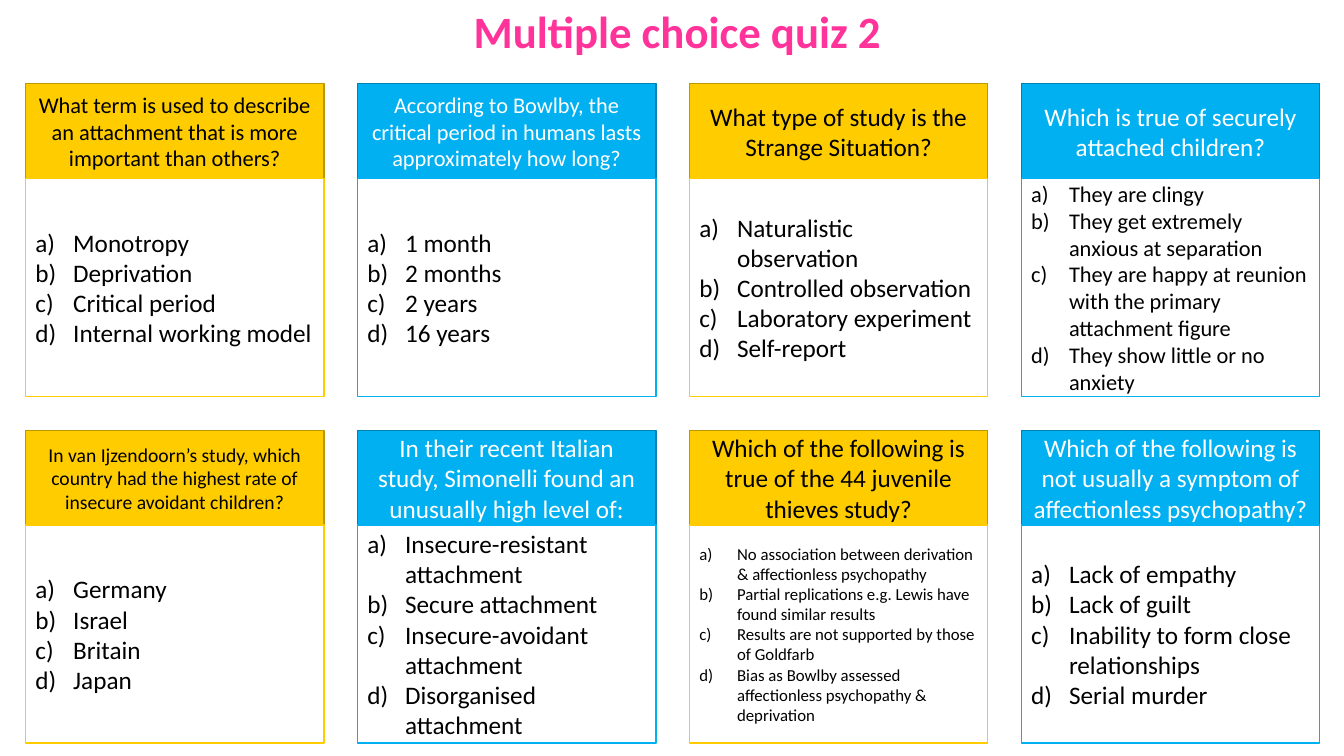
import pptx
import pptx.util
import pptx.dml.color
import pptx.enum.shapes
import pptx.enum.text
import pptx.oxml

Pt = pptx.util.Pt
ALIGN = pptx.enum.text.PP_ALIGN
INK = {"gold": "FFCC00", "bronze": "BD9700", "sky": "00B0F0", "navy": "0082B2",
       "pink": "FF3399", "black": "000000", "white": "FFFFFF"}
THEMES = [("gold", "bronze", "black"), ("sky", "navy", "white")]
LEFT, TOP, STEP, DROP = 18.2, 59.8, 237.1, 247.6
WIDE, HEAD, BODY = 213.2, 67.7, 155.6
INDENT = 27
CARDS = [
    ("What term is used to describe an attachment that is more important than others?", 16,
     ["Monotropy", "Deprivation", "Critical period", "Internal working model"], 18),
    ("According to Bowlby, the critical period in humans lasts approximately how long?", 16,
     ["1 month", "2 months", "2 years", "16 years"], 18),
    ("What type of study is the Strange Situation?", 18,
     ["Naturalistic observation", "Controlled observation", "Laboratory experiment",
      "Self-report"], 18),
    ("Which is true of securely attached children?", 18,
     ["They are clingy", "They get extremely anxious at separation",
      "They are happy at reunion with the primary attachment figure",
      "They show little or no anxiety"], 16),
    ("In van Ijzendoorn’s study, which country had the highest rate of insecure avoidant children?",
     14, ["Germany", "Israel", "Britain", "Japan"], 18),
    ("In their recent Italian study, Simonelli found an unusually high level of:", 18,
     ["Insecure-resistant attachment", "Secure attachment", "Insecure-avoidant attachment",
      "Disorganised attachment"], 18),
    ("Which of the following is true of the 44 juvenile thieves study?", 18,
     ["No association between derivation & affectionless psychopathy",
      "Partial replications e.g. Lewis have found similar results",
      "Results are not supported by those of Goldfarb",
      "Bias as Bowlby assessed affectionless psychopathy & deprivation"], 12),
    ("Which of the following is not usually a symptom of affectionless psychopathy?", 18,
     ["Lack of empathy", "Lack of guilt", "Inability to form close relationships",
      "Serial murder"], 18),
]


def tint(name):
    """Return the named colour."""
    return pptx.dml.color.RGBColor.from_string(INK[name])


def write(para, text, size, ink, align, bold=False):
    """Add one run of text to a paragraph."""
    para.alignment = align
    run = para.add_run()
    run.text = text
    run.font.name = "Calibri"
    run.font.size = Pt(size)
    run.font.bold = bold
    run.font.color.rgb = tint(ink)


def letter(para):
    """Give a paragraph an a), b), c) label with a hanging indent."""
    props = para._p.get_or_add_pPr()
    props.set("marL", str(Pt(INDENT)))
    props.set("indent", str(-Pt(INDENT)))
    mark = pptx.oxml.parse_xml(
        '<a:buAutoNum xmlns:a="http://schemas.openxmlformats.org/drawingml/2006/main"'
        ' type="alphaLcParenR"/>')
    props.append(mark)


def panel(slide, x, y, w, h, fill, edge):
    """Draw a bordered rectangle and return its text frame."""
    shape = slide.shapes.add_shape(pptx.enum.shapes.MSO_SHAPE.RECTANGLE,
                                   Pt(x), Pt(y), Pt(w), Pt(h))
    shape.shadow.inherit = False
    shape.fill.solid()
    shape.fill.fore_color.rgb = tint(fill)
    shape.line.color.rgb = tint(edge)
    shape.line.width = Pt(1)
    frame = shape.text_frame
    frame.word_wrap = True
    frame.vertical_anchor = pptx.enum.text.MSO_ANCHOR.MIDDLE
    return frame


def card(slide, x, y, w, theme, ask, big, picks, small):
    """Draw a question header above its lettered answers."""
    fill, edge, ink = theme
    head = panel(slide, x, y, w, HEAD, fill, edge)
    write(head.paragraphs[0], ask, big, ink, ALIGN.CENTER)
    body = panel(slide, x, y + HEAD, w, BODY, "white", fill)
    for i, pick in enumerate(picks):
        para = body.add_paragraph() if i else body.paragraphs[0]
        write(para, pick, small, "black", ALIGN.LEFT)
        letter(para)


def title(slide, x, y, w, h):
    """Write the slide heading."""
    frame = slide.shapes.add_textbox(Pt(x), Pt(y), Pt(w), Pt(h)).text_frame
    frame.word_wrap = False
    frame.auto_size = pptx.enum.text.MSO_AUTO_SIZE.SHAPE_TO_FIT_TEXT
    write(frame.paragraphs[0], "Multiple choice quiz 2", 32, "pink", ALIGN.CENTER, True)


def main():
    """Build the quiz slide and save it."""
    deck = pptx.Presentation()
    deck.slide_width, deck.slide_height = Pt(960), Pt(540)
    slide = deck.slides.add_slide(deck.slide_layouts[6])
    for i, data in enumerate(CARDS):
        row, col = divmod(i, 4)
        card(slide, LEFT + col * STEP, TOP + row * DROP, WIDE, THEMES[col % 2], *data)
    title(slide, 329.8, -0.7, 308.2, 46)
    deck.save("out.pptx")


if __name__ == "__main__":
    main()
